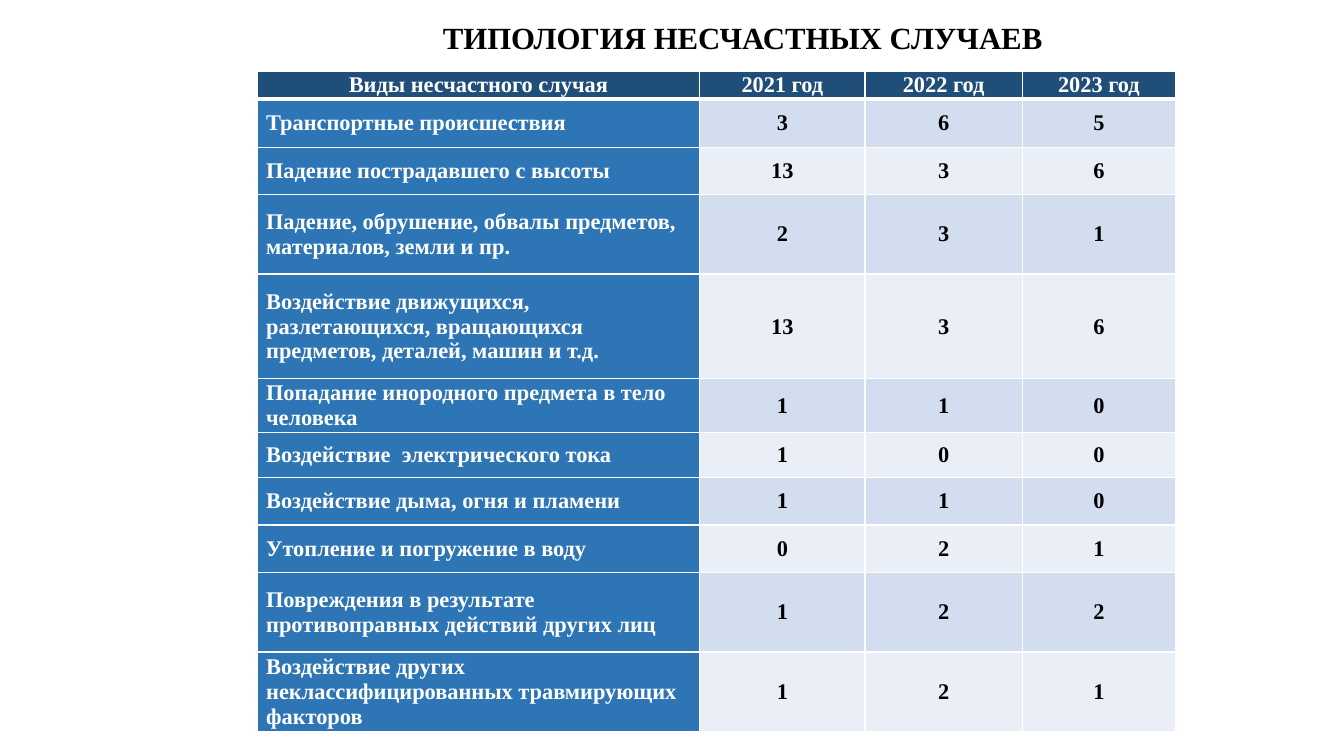
from pptx import Presentation
from pptx import util as u
from pptx.dml.color import RGBColor
from pptx.enum import text
from pptx.oxml import parse_xml
from pptx.oxml.ns import nsdecls

FONT = "Times New Roman"
WHITE, BLACK = "FFFFFF", "000000"
HEADER_FILL, LABEL_FILL = "1F4E79", "2E75B6"
BAND_FILLS = ("D2DEEF", "EAEFF7")

COLUMN_WIDTHS = (4.39, 1.64, 1.56, 1.52)
HEADINGS = ("Виды несчастного случая", "2021 год", "2022 год", "2023 год")
HEADER_HEIGHT = 0.27
# Row height, kind of accident, cases per year
ACCIDENTS = (
    (0.48, "Транспортные происшествия", 3, 6, 5),
    (0.47, "Падение пострадавшего с высоты", 13, 3, 6),
    (0.79, "Падение, обрушение, обвалы предметов, материалов, земли и пр.", 2, 3, 1),
    (1.04, "Воздействие движущихся, разлетающихся, вращающихся предметов, "
           "деталей, машин и т.д.", 13, 3, 6),
    (0.53, "Попадание инородного предмета в тело человека", 1, 1, 0),
    (0.45, "Воздействие  электрического тока", 1, 0, 0),
    (0.47, "Воздействие дыма, огня и пламени", 1, 1, 0),
    (0.47, "Утопление и погружение в воду", 0, 2, 1),
    (0.79, "Повреждения в результате противоправных действий других лиц", 1, 2, 2),
    (0.79, "Воздействие других неклассифицированных травмирующих факторов", 1, 2, 1),
)


def color(value):
    return RGBColor.from_string(value)


def write_text(frame, content, size=16, fill=BLACK, align=text.PP_ALIGN.CENTER):
    frame.word_wrap = True
    paragraph = frame.paragraphs[0]
    paragraph.alignment = align
    run = paragraph.add_run()
    run.text = content
    run.font.name = FONT
    run.font.size = u.Pt(size)
    run.font.bold = True
    run.font.color.rgb = color(fill)


def set_borders(cell, top=1, bottom=1):
    properties = cell._tc.get_or_add_tcPr()
    for side, width in (("L", 1), ("R", 1), ("T", top), ("B", bottom)):
        properties.append(parse_xml(
            f'<a:ln{side} {nsdecls("a")} w="{u.Pt(width)}"><a:solidFill>'
            f'<a:srgbClr val="{WHITE}"/></a:solidFill></a:ln{side}>'))


def fill_cell(cell, content, background, top=1, bottom=1, **text_format):
    cell.margin_left = cell.margin_right = u.Inches(0.09)
    cell.margin_top = cell.margin_bottom = 0
    cell.vertical_anchor = text.MSO_ANCHOR.MIDDLE
    set_borders(cell, top, bottom)
    cell.fill.solid()
    cell.fill.fore_color.rgb = color(background)
    write_text(cell.text_frame, content, **text_format)


def add_title(slide, content):
    title = slide.shapes.title
    title.left, title.top = u.Inches(1.39), u.Inches(0.13)
    title.width, title.height = u.Inches(11.95), u.Inches(0.47)
    title.text_frame.vertical_anchor = text.MSO_ANCHOR.MIDDLE
    write_text(title.text_frame, content, size=22)


def add_accident_table(slide):
    heights = [HEADER_HEIGHT] + [accident[0] for accident in ACCIDENTS]
    table = slide.shapes.add_table(
        len(heights), len(COLUMN_WIDTHS), u.Inches(2.55), u.Inches(0.71),
        u.Inches(sum(COLUMN_WIDTHS)), u.Inches(sum(heights))).table
    for column, width in zip(table.columns, COLUMN_WIDTHS):
        column.width = u.Inches(width)
    for row, height in zip(table.rows, heights):
        row.height = u.Inches(height)

    # Header row with a thick rule below
    for index, heading in enumerate(HEADINGS):
        fill_cell(table.cell(0, index), heading, HEADER_FILL, bottom=3, fill=WHITE)

    # Accident kinds and banded yearly counts
    for row, (_, label, *counts) in enumerate(ACCIDENTS, start=1):
        top = 3 if row == 1 else 1
        fill_cell(table.cell(row, 0), label, LABEL_FILL, top=top,
                  fill=WHITE, align=text.PP_ALIGN.LEFT)
        for column, count in enumerate(counts, start=1):
            fill_cell(table.cell(row, column), str(count),
                      BAND_FILLS[(row - 1) % 2], top=top)


def main():
    presentation = Presentation()
    presentation.slide_width = u.Inches(13.33)
    presentation.slide_height = u.Inches(7.5)
    slide = presentation.slides.add_slide(presentation.slide_layouts[5])
    add_title(slide, "ТИПОЛОГИЯ НЕСЧАСТНЫХ СЛУЧАЕВ")
    add_accident_table(slide)
    presentation.save("out.pptx")


if __name__ == "__main__":
    main()
